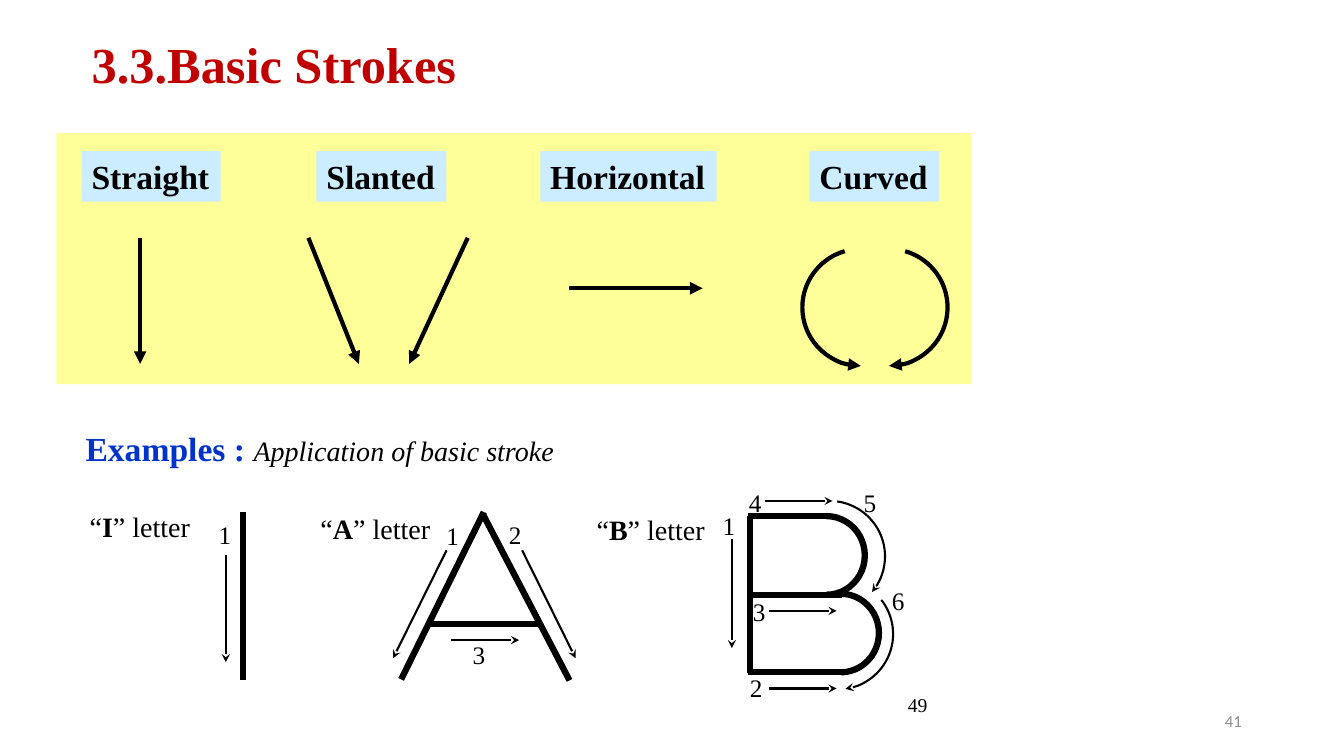
from lxml import etree
from pptx import Presentation
from pptx import util as u
from pptx.dml.color import RGBColor
from pptx.enum import shapes, text
from pptx.oxml import ns

BLACK = RGBColor(0x00, 0x00, 0x00)
RED = RGBColor(0xC0, 0x00, 0x00)
BLUE = RGBColor(0x00, 0x33, 0xCC)
GRAY = RGBColor(0x8C, 0x8C, 0x8C)
YELLOW = RGBColor(0xFF, 0xFF, 0x99)
PALE_BLUE = RGBColor(0xCC, 0xEC, 0xFF)

COLUMNS, ROWS = 133.33, 75
BOLD, ITALIC = "bold", "italic"
GUIDE, STROKE, LETTER = 1.5, 3, 4.5  # line widths in points


class StrokeSlide:
    """Draws on one slide; every position is in grid columns and rows."""

    font = "Times New Roman"

    def __init__(self, presentation):
        self.slide = presentation.slides.add_slide(presentation.slide_layouts[6])
        self.column = presentation.slide_width / COLUMNS
        self.row = presentation.slide_height / ROWS

    def grid(self, x, y, *more):
        """Turn alternating column and row values into lengths."""
        units = (self.column, self.row) * 2
        return [u.Emu(round(value * unit)) for value, unit in zip((x, y, *more), units)]

    def panel(self, box, color):
        shape = self.slide.shapes.add_shape(shapes.MSO_SHAPE.RECTANGLE, *self.grid(*box))
        shape.shadow.inherit = False
        shape.fill.solid()
        shape.fill.fore_color.rgb = color
        shape.line.fill.background()

    def label(self, box, *parts, size=20, color=BLACK, fill=None, wrap=False,
              right=False, middle=False, font=None):
        """Add a text box; each part is a string or (string, style, size, color)."""
        shape = self.slide.shapes.add_textbox(*self.grid(*box))
        if fill is not None:
            shape.fill.solid()
            shape.fill.fore_color.rgb = fill
        frame = shape.text_frame
        frame.word_wrap = wrap
        if not wrap:
            frame.auto_size = text.MSO_AUTO_SIZE.SHAPE_TO_FIT_TEXT
        if middle:
            frame.vertical_anchor = text.MSO_ANCHOR.MIDDLE
        paragraph = frame.paragraphs[0]
        if right:
            paragraph.alignment = text.PP_ALIGN.RIGHT
        for part in parts:
            if isinstance(part, str):
                part = (part, None)
            words, style, run_size, run_color = (*part, size, color)[:4]
            run = paragraph.add_run()
            run.text = words
            run.font.name = font or self.font
            run.font.size = u.Pt(run_size)
            run.font.color.rgb = run_color
            run.font.bold = style == BOLD
            run.font.italic = style == ITALIC

    def pen(self, shape, width, end=None, arrow=None):
        shape.line.color.rgb = BLACK
        shape.line.width = u.Pt(width)
        if arrow:
            outline = shape.line._get_or_add_ln()
            etree.SubElement(outline, ns.qn(f"a:{end}End"), type=arrow)

    def line(self, start, finish, width, arrow=None):
        connector = self.slide.shapes.add_connector(
            shapes.MSO_CONNECTOR.STRAIGHT, *self.grid(*start, *finish))
        self.pen(connector, width, "tail", arrow)
        etree.SubElement(connector._element.spPr, ns.qn("a:effectLst"))

    def arc(self, center, radii, angles, width, end=None, arrow=None):
        """Draw clockwise between two angles in degrees, 0 pointing right."""
        (x, y), (across, down) = center, radii
        shape = self.slide.shapes.add_shape(
            shapes.MSO_SHAPE.ARC,
            *self.grid(x - across, y - down, 2 * across, 2 * down))
        shape.shadow.inherit = False
        shape.fill.background()
        for index, angle in enumerate(angles):
            shape.adjustments[index] = angle * 0.6  # 60000 units per degree
        self.pen(shape, width, end, arrow)


def draw_basic_strokes(page):
    page.panel((5.6, 13.2, 90.8, 24.9), YELLOW)
    page.label((8.1, 0, 85, 12.5), ("3.3.Basic Strokes", BOLD),
               size=36, color=RED, wrap=True, middle=True)
    for name, left, width in (("Straight", 8.1, 13.8), ("Slanted", 31.4, 12.9),
                              ("Horizontal", 53.6, 17.5), ("Curved", 80.3, 12.9)):
        page.label((left, 15, width, 5), (name, BOLD), size=24, fill=PALE_BLUE)
    for top_x, bottom_x in ((13.9, 13.9), (30.6, 35.6), (46.4, 40.6)):
        page.line((top_x, 23.6), (bottom_x, 36.1), STROKE, "triangle")
    page.line((56.4, 28.6), (69.7, 28.6), STROKE, "triangle")
    for x, angles, end in ((85.4, (90, 254), "head"), (88.2, (286, 90), "tail")):
        page.arc((x, 30.5), (5.8, 5.8), angles, STROKE, end, "triangle")


def draw_letters(page):
    page.label((7.5, 42, 48.8, 5), ("Examples : ", BOLD, 24, BLUE),
               ("Application of basic stroke", ITALIC))
    for letter, left, top, width in (("I", 7.9, 50.1, 12), ("A", 30.8, 50.3, 13),
                                     ("B", 58.2, 50.4, 12.8)):
        page.label((left, top, width, 4.4), "“", (letter, BOLD), "” letter")

    letter_lines = (
        ((24.1, 50.8), (24.1, 67.5)),  # I
        ((48, 50.8), (39.8, 67.4)), ((47.9, 51), (56.5, 67.5)),  # A
        ((42.6, 61.9), (53.5, 61.9)),
        ((74.4, 51.2), (74.4, 66.8)), ((74.2, 66.7), (83.5, 66.7)),  # B
        ((74.2, 59), (83.5, 59)), ((74.2, 51.2), (82.3, 51.2)),
    )
    for start, finish in letter_lines:
        page.line(start, finish, LETTER)
    for center in ((82, 55.1), (83.4, 62.8)):
        page.arc(center, (3.8, 3.9), (270, 90), LETTER)

    guide_lines = (
        ((22.4, 55.1), (22.4, 65.7)),  # I
        ((44.3, 54.6), (39, 65.3)), ((51.8, 54.6), (57.1, 65.3)),  # A
        ((44.7, 63.5), (51.5, 63.5)),
        ((72.6, 53.5), (72.6, 64.3)), ((76.3, 68.3), (83, 68.3)),  # B
        ((76.3, 60.6), (83, 60.6)), ((75.9, 49.7), (82.6, 49.7)),
    )
    for start, finish in guide_lines:
        page.line(start, finish, GUIDE, "stealth")
    for center, angles in (((82.3, 55.2), (278, 40)), ((83.1, 62.9), (322, 82))):
        page.arc(center, (5.5, 5.5), angles, GUIDE, "tail", "stealth")

    stroke_numbers = (
        ("1", 20.7, 51),  # I
        ("1", 43.3, 51.1), ("2", 49.5, 51), ("3", 45.9, 62.9),  # A
        ("1", 70.7, 50.1), ("2", 73.4, 66.2), ("3", 73.7, 58.7),  # B
        ("4", 73.3, 47.9), ("5", 84.7, 47.9), ("6", 87.5, 57.6),
    )
    for number, left, top in stroke_numbers:
        page.label((left, top, 3.4, 4), number, size=18)


def main():
    presentation = Presentation()
    presentation.slide_width = u.Inches(13.33)
    presentation.slide_height = u.Inches(7.5)
    page = StrokeSlide(presentation)
    draw_basic_strokes(page)
    draw_letters(page)
    page.label((72.2, 68.3, 20.8, 5), "49", size=14, wrap=True, right=True)
    page.label((94.2, 69.5, 30, 4), "41", size=12, color=GRAY, wrap=True,
               right=True, middle=True, font="Calibri")
    presentation.save("out.pptx")


if __name__ == "__main__":
    main()
